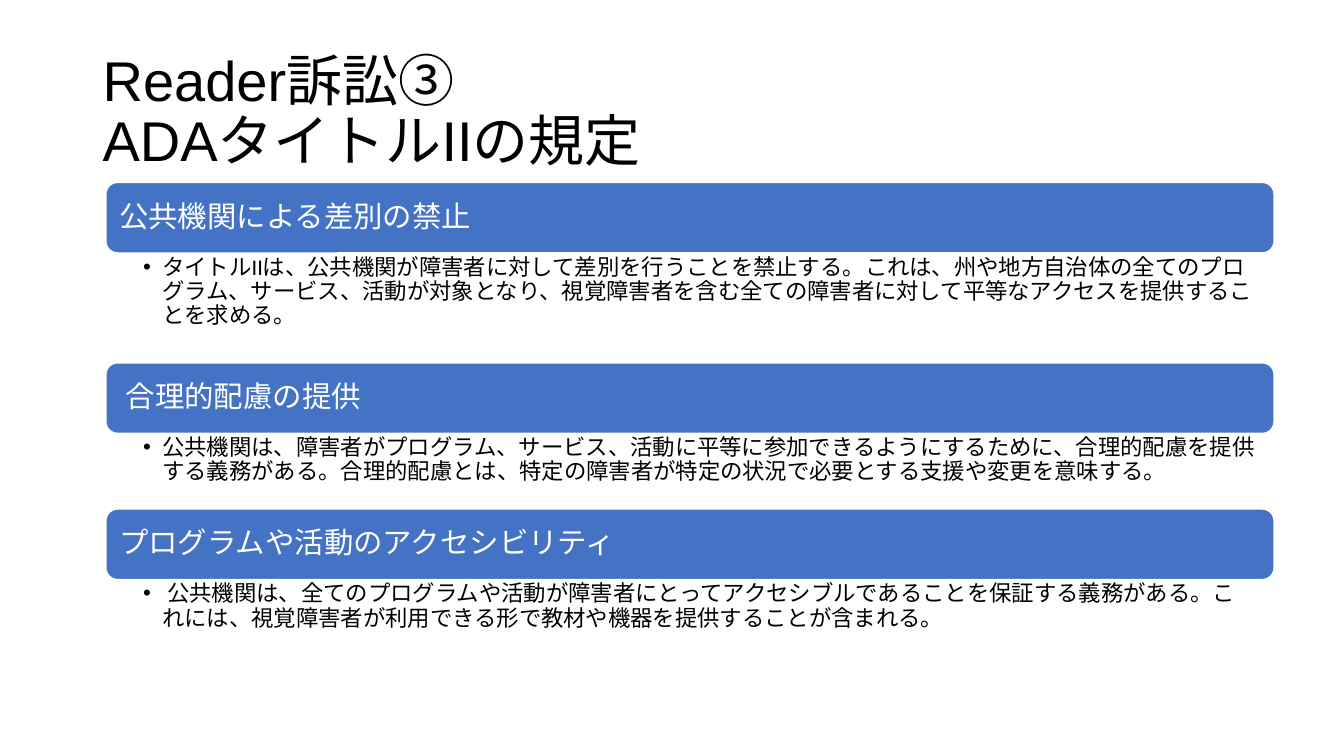
from dataclasses import dataclass

from lxml.etree import SubElement
from pptx import Presentation
from pptx.dml.color import RGBColor
from pptx.enum.lang import MSO_LANGUAGE_ID
from pptx.enum.shapes import MSO_SHAPE
from pptx.enum.text import MSO_ANCHOR, PP_ALIGN
from pptx.oxml.ns import qn
from pptx.util import Inches, Pt


@dataclass(frozen=True)
class Theme:
    ink: RGBColor = RGBColor(0x00, 0x00, 0x00)
    paper: RGBColor = RGBColor(0xFF, 0xFF, 0xFF)
    accent: RGBColor = RGBColor(0x44, 0x72, 0xC4)
    title_font: str = "Arial"
    body_font: str = "Calibri"
    title_size: int = 40
    heading_size: int = 21
    body_size: int = 16
    line_spacing: float = 0.9


COLUMNS, ROWS = 160, 90
TITLE_BOX = (11.04, 4.8, 138, 17.4)
LEFT, WIDTH = 12.6, 139.08
FIRST_ROW, HEADING_ROWS = 21.72, 8.4

TITLE = "Reader訴訟③\nADAタイトルIIの規定"
# heading, explanation, rows given to the explanation
PROVISIONS = [
    (
        "公共機関による差別の禁止",
        "タイトルIIは、公共機関が障害者に対して差別を行うことを禁止する。"
        "これは、州や地方自治体の全てのプログラム、サービス、活動が対象となり、"
        "視覚障害者を含む全ての障害者に対して平等なアクセスを提供することを求める。",
        13.08,
    ),
    (
        " 合理的配慮の提供",
        "公共機関は、障害者がプログラム、サービス、活動に平等に参加できるようにするために、"
        "合理的配慮を提供する義務がある。"
        "合理的配慮とは、特定の障害者が特定の状況で必要とする支援や変更を意味する。",
        9,
    ),
    (
        "プログラムや活動のアクセシビリティ",
        " 公共機関は、全てのプログラムや活動が障害者にとってアクセシブルであることを保証する義務がある。"
        "これには、視覚障害者が利用できる形で教材や機器を提供することが含まれる。",
        9,
    ),
]


def write(frame, text, *, font, size, color, spacing,
          anchor=MSO_ANCHOR.TOP, insets=(0.1, 0.05, 0.1, 0.05), bullet_indent=None):
    """Fill a text frame; insets (left, top, right, bottom) and indent are inches."""
    frame.word_wrap = True
    frame.vertical_anchor = anchor
    (frame.margin_left, frame.margin_top,
     frame.margin_right, frame.margin_bottom) = map(Inches, insets)
    paragraph = frame.paragraphs[0]
    paragraph.text = text
    paragraph.alignment = PP_ALIGN.LEFT
    paragraph.line_spacing = spacing
    for run in paragraph.runs:
        run.font.name = font
        run.font.size = Pt(size)
        run.font.color.rgb = color
        run.font.language_id = MSO_LANGUAGE_ID.JAPANESE
    if bullet_indent:
        properties = paragraph._p.get_or_add_pPr()
        properties.set("marL", str(Inches(bullet_indent)))
        properties.set("indent", str(-Inches(bullet_indent)))
        SubElement(properties, qn("a:buFont"), typeface="Arial")
        SubElement(properties, qn("a:buChar"), char="•")


class SlideBuilder:
    def __init__(self, deck, theme):
        self.theme = theme
        self.slide = deck.slides.add_slide(deck.slide_layouts[6])
        self.column = deck.slide_width / COLUMNS
        self.row = deck.slide_height / ROWS

    def place(self, left, top, width, height):
        """Turn grid columns and rows into slide lengths."""
        return (round(left * self.column), round(top * self.row),
                round(width * self.column), round(height * self.row))

    def title(self, text, box):
        holder = self.slide.shapes.add_textbox(*self.place(*box))
        write(holder.text_frame, text, font=self.theme.title_font,
              size=self.theme.title_size, color=self.theme.ink,
              spacing=self.theme.line_spacing, anchor=MSO_ANCHOR.MIDDLE)

    def heading(self, text, box):
        bar = self.slide.shapes.add_shape(MSO_SHAPE.ROUNDED_RECTANGLE, *self.place(*box))
        bar.shadow.inherit = False
        bar.fill.solid()
        bar.fill.fore_color.rgb = self.theme.accent
        bar.line.color.rgb = self.theme.paper
        bar.line.width = Pt(1)
        write(bar.text_frame, text, font=self.theme.body_font,
              size=self.theme.heading_size, color=self.theme.paper,
              spacing=self.theme.line_spacing, anchor=MSO_ANCHOR.MIDDLE,
              insets=(0.1, 0.09, 0.1, 0.09))

    def explanation(self, text, box):
        holder = self.slide.shapes.add_textbox(*self.place(*box))
        write(holder.text_frame, text, font=self.theme.body_font,
              size=self.theme.body_size, color=self.theme.ink,
              spacing=self.theme.line_spacing,
              insets=(0.37, 0.03, 0.16, 0.03), bullet_indent=0.19)


def main():
    deck = Presentation()
    deck.slide_width, deck.slide_height = Inches(13.33), Inches(7.5)
    builder = SlideBuilder(deck, Theme())
    builder.title(TITLE, TITLE_BOX)
    top = FIRST_ROW
    for heading, explanation, explanation_rows in PROVISIONS:
        builder.heading(heading, (LEFT, top, WIDTH, HEADING_ROWS))
        top += HEADING_ROWS
        builder.explanation(explanation, (LEFT, top, WIDTH, explanation_rows))
        top += explanation_rows
    deck.save("out.pptx")


if __name__ == "__main__":
    main()
